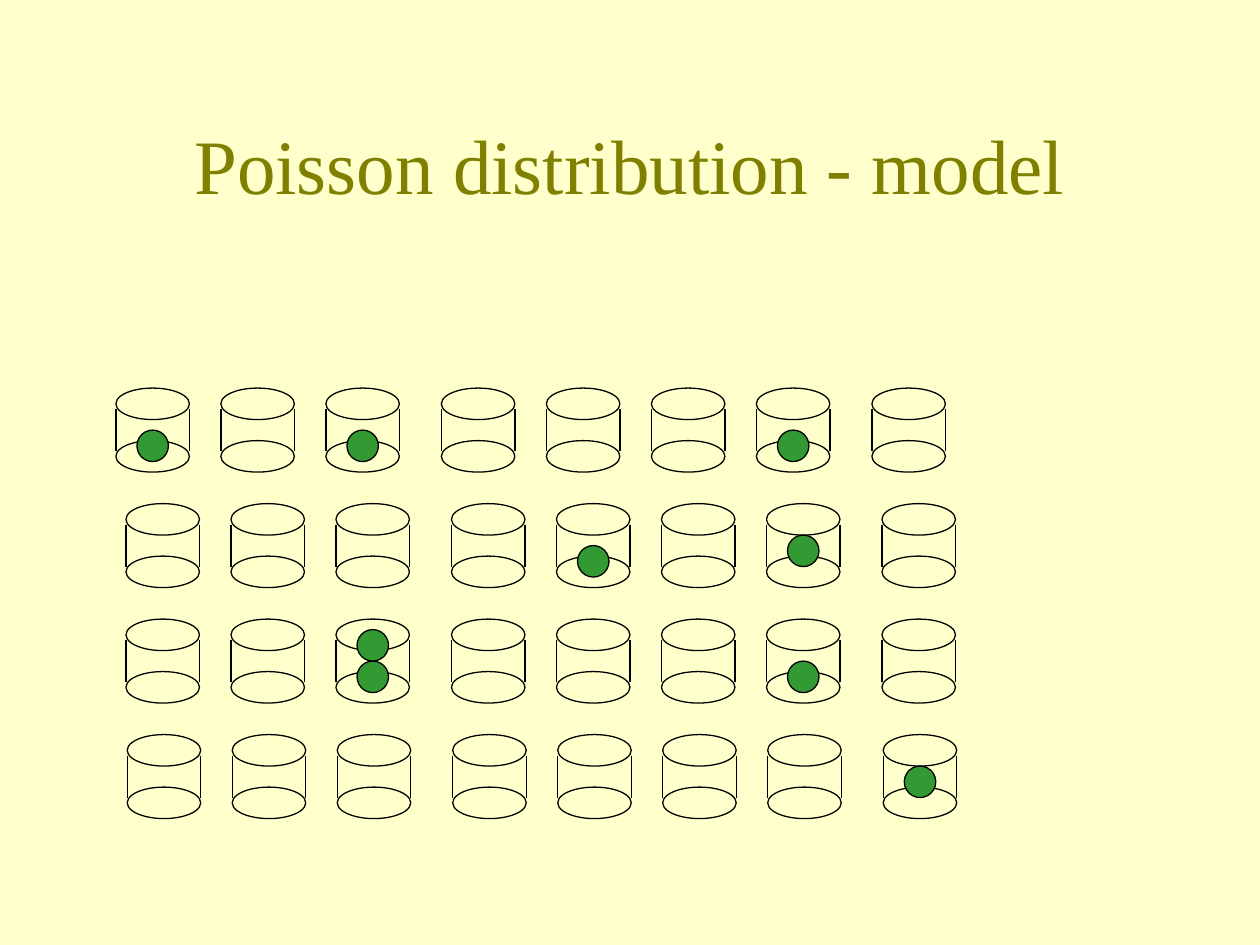
import pptx
import pptx.util
import pptx.dml.color
import pptx.enum.shapes
import pptx.enum.text
import pptx.oxml.ns
import lxml.etree

Inches = pptx.util.Inches
COLORS = {"background": "FFFFCC", "title": "808000", "outline": "000000", "ball": "339933"}

# Cups and balls sit on a grid of twelfths of an inch
UNIT = 1 / 12
CUP_WIDTH, RIM_HEIGHT, BALL_SIZE = 7 * UNIT, 3 * UNIT, 3 * UNIT
ROW_LEFTS = [0.92, 1, 1, 1.01]
COLUMN_OFFSETS = [units * UNIT for units in (0, 10, 20, 31, 41, 51, 61, 72)]
FIRST_TOP, ROW_STEP = 3.08, 11 * UNIT

# Row, column and drop below the cup's top, in units
BALLS = [(1, 4, 4), (0, 0, 4), (2, 6, 4), (2, 2, 4), (0, 2, 4),
         (2, 2, 1), (3, 7, 3), (1, 6, 3), (0, 6, 4)]


def rgb(name):
    return pptx.dml.color.RGBColor.from_string(COLORS[name])


def cup_origin(row, column):
    return ROW_LEFTS[row] + COLUMN_OFFSETS[column], FIRST_TOP + row * ROW_STEP


class SlidePainter:
    font = "Times New Roman"
    line_width = pptx.util.Pt(0.75)

    def __init__(self, slide):
        self.slide = slide
        slide.background.fill.solid()
        slide.background.fill.fore_color.rgb = rgb("background")

    def title(self, words, left, top, width, height):
        heading = self.slide.shapes.add_textbox(
            Inches(left), Inches(top), Inches(width), Inches(height))
        frame = heading.text_frame
        frame.word_wrap = True
        frame.vertical_anchor = pptx.enum.text.MSO_ANCHOR.MIDDLE
        paragraph = frame.paragraphs[0]
        paragraph.alignment = pptx.enum.text.PP_ALIGN.CENTER
        run = paragraph.add_run()
        run.text = words
        run.font.name = self.font
        run.font.size = pptx.util.Pt(44)
        run.font.color.rgb = rgb("title")

    def outline(self, line):
        line.color.rgb = rgb("outline")
        line.width = self.line_width

    def ellipse(self, left, top, width, height, fill=None):
        oval = self.slide.shapes.add_shape(
            pptx.enum.shapes.MSO_SHAPE.OVAL,
            Inches(left), Inches(top), Inches(width), Inches(height))
        oval.shadow.inherit = False
        if fill:
            oval.fill.solid()
            oval.fill.fore_color.rgb = rgb(fill)
        else:
            oval.fill.background()
        self.outline(oval.line)

    def vertical_line(self, x, top, bottom):
        side = self.slide.shapes.add_connector(
            pptx.enum.shapes.MSO_CONNECTOR.STRAIGHT,
            Inches(x), Inches(top), Inches(x), Inches(bottom))
        self.outline(side.line)
        lxml.etree.SubElement(side._element.spPr, pptx.oxml.ns.qn("a:effectLst"))

    def cup(self, left, top):
        for rim_top in (top, top + 5 * UNIT):
            self.ellipse(left, rim_top, CUP_WIDTH, RIM_HEIGHT)
        for x in (left, left + CUP_WIDTH):
            self.vertical_line(x, top + 2 * UNIT, top + 6 * UNIT)

    def ball(self, left, top):
        self.ellipse(left, top, BALL_SIZE, BALL_SIZE, "ball")


def main():
    deck = pptx.Presentation()
    deck.slide_width, deck.slide_height = Inches(10), Inches(7.5)
    painter = SlidePainter(deck.slides.add_slide(deck.slide_layouts[6]))

    painter.title("Poisson distribution - model", 0.75, 0.67, 8.5, 1.25)

    # Four rows of eight cups
    for row in range(len(ROW_LEFTS)):
        for column in range(len(COLUMN_OFFSETS)):
            painter.cup(*cup_origin(row, column))

    # Balls, centred across their cups
    for row, column, drop in BALLS:
        left, top = cup_origin(row, column)
        painter.ball(left + (CUP_WIDTH - BALL_SIZE) / 2, top + drop * UNIT)

    deck.save("out.pptx")


if __name__ == "__main__":
    main()
